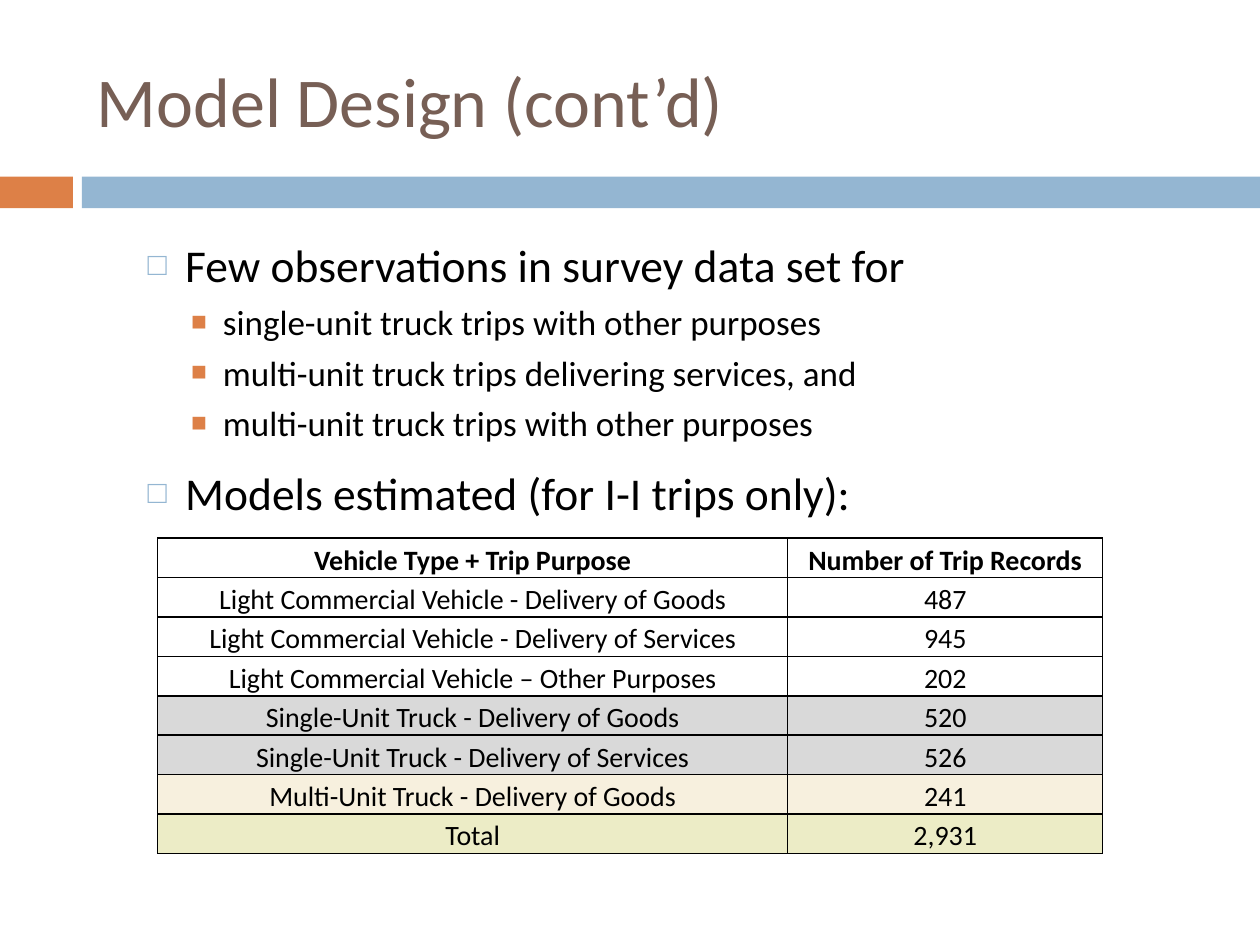
"""Build the Model Design slide with bullets and a table of trip records."""
from dataclasses import dataclass

import lxml.etree
import pptx
import pptx.dml.color
import pptx.enum.shapes
import pptx.enum.text
import pptx.oxml.ns
import pptx.util
from pptx.util import Cm

FONT = "Calibri"
BLACK, BLUE, ORANGE, BROWN = "000000", "94B6D2", "DD8047", "775F55"
GREY, CREAM, GREEN = "D9D9D9", "F7F0DE", "ECECC6"
ALIGN = pptx.enum.text.PP_ALIGN
ANCHOR = pptx.enum.text.MSO_ANCHOR


@dataclass(frozen=True)
class Bar:
    left: float
    width: float
    color: str


@dataclass(frozen=True)
class BulletStyle:
    level: int
    size: int
    margin: float
    hanging: float
    symbol: str
    color: str
    percent: int


@dataclass(frozen=True)
class Bullet:
    text: str
    style: BulletStyle
    space_before: float


@dataclass(frozen=True)
class Record:
    label: str
    count: str
    fill: str | None = None
    bold: bool = False


MAIN = BulletStyle(0, 26, 1.78, 0.76, "□", BLUE, 70)
SUB = BulletStyle(1, 20, 2.54, 0.64, "■", ORANGE, 75)
BARS = [Bar(0, 1.47, ORANGE), Bar(1.65, 23.75, BLUE)]
BULLETS = [
    Bullet("Few observations in survey data set for", MAIN, 5.5),
    Bullet("single-unit truck trips with other purposes", SUB, 5),
    Bullet("multi-unit truck trips delivering services, and", SUB, 5),
    Bullet("multi-unit truck trips with other purposes", SUB, 5),
    Bullet("Models estimated (for I-I trips only):", MAIN, 12),
]
RECORDS = [
    Record("Vehicle Type + Trip Purpose", "Number of Trip Records", bold=True),
    Record("Light Commercial Vehicle - Delivery of Goods", "487"),
    Record("Light Commercial Vehicle - Delivery of Services", "945"),
    Record("Light Commercial Vehicle – Other Purposes", "202"),
    Record("Single-Unit Truck - Delivery of Goods", "520", GREY),
    Record("Single-Unit Truck - Delivery of Services", "526", GREY),
    Record("Multi-Unit Truck - Delivery of Goods", "241", CREAM),
    Record("Total", "2,931", GREEN),
]
COLUMN_WIDTHS = [12.7, 6.35]
ROW_HEIGHT = 0.79


def rgb(color: str) -> pptx.dml.color.RGBColor:
    return pptx.dml.color.RGBColor.from_string(color)


def add_element(parent, tag: str, **attributes: str):
    return lxml.etree.SubElement(parent, pptx.oxml.ns.qn(tag), attributes)


def add_run(paragraph, text: str, size: int, color: str = BLACK, bold: bool = False) -> None:
    run = paragraph.add_run()
    run.text = text
    run.font.name = FONT
    run.font.size = pptx.util.Pt(size)
    run.font.bold = bold
    run.font.color.rgb = rgb(color)


def place(shape, left: float, top: float, width: float, height: float) -> None:
    shape.left, shape.top = Cm(left), Cm(top)
    shape.width, shape.height = Cm(width), Cm(height)


def add_bar(slide, bar: Bar) -> None:
    shape = slide.shapes.add_shape(
        pptx.enum.shapes.MSO_SHAPE.RECTANGLE, Cm(bar.left), Cm(3.56), Cm(bar.width), Cm(0.64)
    )
    shape.shadow.inherit = False
    shape.fill.solid()
    shape.fill.fore_color.rgb = rgb(bar.color)
    shape.line.fill.background()


def write_title(title, text: str) -> None:
    place(title, 1.7, 0.64, 22.66, 2.74)
    title.text_frame.vertical_anchor = ANCHOR.MIDDLE
    paragraph = title.text_frame.paragraphs[0]
    paragraph.alignment = ALIGN.LEFT
    add_run(paragraph, text, 40, BROWN)


def write_bullet(paragraph, bullet: Bullet) -> None:
    style = bullet.style
    paragraph.level = style.level
    paragraph.space_before = pptx.util.Pt(bullet.space_before)
    properties = paragraph._p.get_or_add_pPr()
    properties.set("marL", str(Cm(style.margin)))
    properties.set("indent", str(-Cm(style.hanging)))
    add_element(add_element(properties, "a:buClr"), "a:srgbClr", val=style.color)
    add_element(properties, "a:buSzPct", val=str(style.percent * 1000))
    add_element(properties, "a:buChar", char=style.symbol)
    add_run(paragraph, bullet.text, style.size)


def write_body(body, bullets: list[Bullet]) -> None:
    place(body, 1.7, 4.65, 22.66, 12.5)
    frame = body.text_frame
    frame.auto_size = pptx.enum.text.MSO_AUTO_SIZE.NONE
    for index, bullet in enumerate(bullets):
        write_bullet(frame.add_paragraph() if index else frame.paragraphs[0], bullet)


def add_borders(cell) -> None:
    properties = cell._tc.get_or_add_tcPr()
    for side in ("a:lnL", "a:lnR", "a:lnT", "a:lnB"):
        line = add_element(properties, side, w=str(pptx.util.Pt(1)))
        add_element(add_element(line, "a:solidFill"), "a:srgbClr", val=BLACK)


def write_cell(cell, text: str, record: Record) -> None:
    add_borders(cell)
    if record.fill:
        cell.fill.solid()
        cell.fill.fore_color.rgb = rgb(record.fill)
    else:
        cell.fill.background()
    cell.vertical_anchor = ANCHOR.MIDDLE
    cell.margin_left = cell.margin_right = Cm(0.17)
    cell.margin_top = cell.margin_bottom = 0
    paragraph = cell.text_frame.paragraphs[0]
    paragraph.alignment = ALIGN.CENTER
    paragraph.line_spacing = 1.15
    add_run(paragraph, text, 16, bold=record.bold)


def add_records_table(slide, records: list[Record]) -> None:
    table = slide.shapes.add_table(
        len(records), len(COLUMN_WIDTHS), Cm(3.18), Cm(10.85),
        Cm(sum(COLUMN_WIDTHS)), Cm(ROW_HEIGHT * len(records)),
    ).table
    table.first_row = table.horz_banding = False
    for column, width in zip(table.columns, COLUMN_WIDTHS):
        column.width = Cm(width)
    for row, record in zip(table.rows, records):
        row.height = Cm(ROW_HEIGHT)
        for cell, text in zip(row.cells, (record.label, record.count)):
            write_cell(cell, text, record)


def main() -> None:
    presentation = pptx.Presentation()
    presentation.slide_width, presentation.slide_height = Cm(25.4), Cm(19.05)
    slide = presentation.slides.add_slide(presentation.slide_layouts[1])
    for bar in BARS:
        add_bar(slide, bar)
    write_title(slide.shapes.title, "Model Design (cont’d)")
    write_body(slide.placeholders[1], BULLETS)
    add_records_table(slide, RECORDS)
    presentation.save("out.pptx")


if __name__ == "__main__":
    main()
